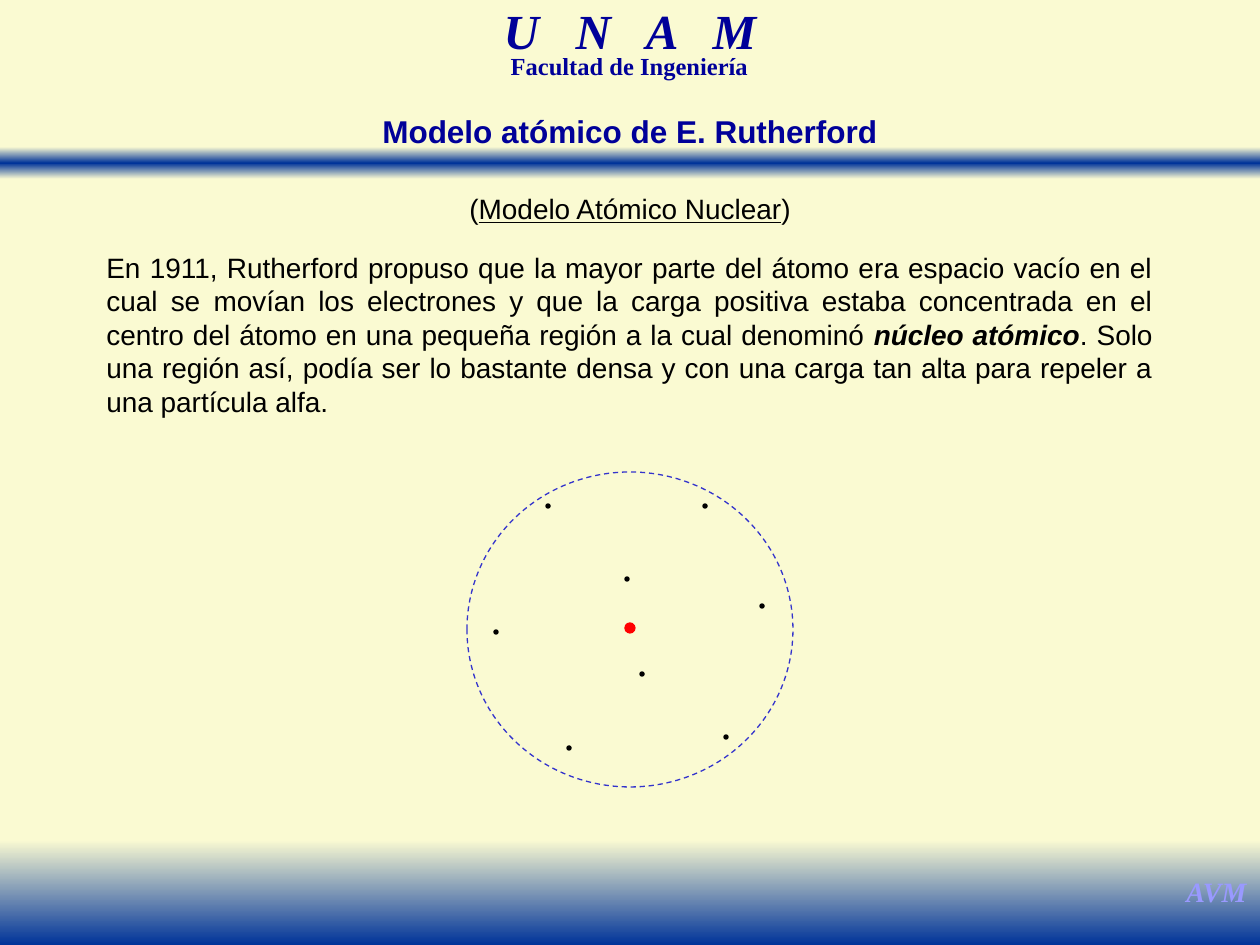
"""Build a slide on Rutherford's atomic model."""
from lxml import etree
from pptx import Presentation, util as u
from pptx.dml.color import RGBColor
from pptx.enum import dml, shapes, text
from pptx.oxml.ns import qn

COLORS = {
    "cream": "FAFAD2", "deep": "003399", "navy": "000099", "lilac": "9999FF",
    "ink": "000000", "nucleus": "FF0000", "orbit": "3333CC",
}
ELECTRONS = [(546, 504), (703, 504), (625, 577), (494, 630),
             (760, 604), (640, 672), (724, 735), (567, 746)]
SERIF = "Times New Roman"


def px(value):
    return u.Emu(round(value * 914400 / 126))


def rgb(name):
    return RGBColor.from_string(COLORS[name])


class Painter:
    def __init__(self, page):
        self.page = page
        fill = page.background.fill
        fill.solid()
        fill.fore_color.rgb = rgb("cream")

    def band(self, top, height, names):
        box = self.page.shapes.add_shape(
            shapes.MSO_SHAPE.RECTANGLE, px(0), px(top), px(1260), px(height))
        box.shadow.inherit = False
        box.line.fill.background()
        box.fill.gradient()
        box.fill.gradient_angle = 270
        stops = box._element.spPr.find(".//" + qn("a:gsLst"))
        for stop in list(stops):
            stops.remove(stop)
        for index, name in enumerate(names):
            position = index * 100000 // (len(names) - 1)
            stop = etree.SubElement(stops, qn("a:gs"), pos=str(position))
            etree.SubElement(stop, qn("a:srgbClr"), val=COLORS[name])

    def ellipse(self, parent, left, top, width, height, color, filled=True):
        dot = parent.add_shape(
            shapes.MSO_SHAPE.OVAL, px(left), px(top), px(width), px(height))
        dot.shadow.inherit = False
        dot.line.color.rgb = rgb(color)
        dot.line.width = u.Pt(0.75)
        if filled:
            dot.fill.solid()
            dot.fill.fore_color.rgb = rgb(color)
        else:
            dot.fill.background()
            dot.line.dash_style = dml.MSO_LINE.DASH

    def text(self, area, spans, size, color="ink", font="Arial", style="",
             align="CENTER", leading=None, wrap=True, box=None):
        box = box or self.page.shapes.add_textbox(0, 0, 0, 0)
        box.left, box.top, box.width, box.height = map(px, area)
        frame = box.text_frame
        frame.word_wrap = wrap
        frame.auto_size = text.MSO_AUTO_SIZE.SHAPE_TO_FIT_TEXT
        frame.vertical_anchor = text.MSO_ANCHOR.TOP
        para = frame.paragraphs[0]
        para.alignment = text.PP_ALIGN[align]
        if leading:
            para.line_spacing = leading
        for words, marks in spans:
            span = para.add_run()
            span.text = words
            marks += style
            span.font.name = font
            span.font.size = u.Pt(size)
            span.font.color.rgb = rgb(color)
            span.font.bold = "b" in marks
            span.font.italic = "i" in marks
            span.font.underline = "u" in marks
            if "w" in marks:
                span._r.get_or_add_rPr().set("spc", "700")


def main():
    deck = Presentation()
    deck.slide_width, deck.slide_height = px(1260), px(945)
    page = deck.slides.add_slide(deck.slide_layouts[5])
    painter = Painter(page)

    painter.band(147, 32, ["cream", "deep", "cream"])
    painter.text((383, 10, 494, 54), [("U N A ", "w"), ("M", "")], 28,
                 "navy", SERIF, "bi", leading=0.7)
    painter.text((404, 53, 451, 33), [("Facultad de Ingeniería", "")], 14,
                 "navy", SERIF, "b", leading=0.7)
    painter.band(840, 105, ["cream", "deep"])
    painter.text((1173, 868, 87, 47), [("AVM", "")], 16,
                 "lilac", SERIF, "bi", wrap=False)

    painter.text((357, 106, 546, 50), [("Modelo atómico de E. Rutherford", "")],
                 18, "navy", style="b", box=page.shapes.title)
    painter.text((357, 185, 546, 47),
                 [("(", ""), ("Modelo Atómico Nuclear", "u"), (")", "")], 16)
    painter.text((94, 244, 1071, 183), [
        ("En 1911, Rutherford propuso que la mayor parte del átomo era espacio "
         "vacío en el cual se movían los electrones y que la carga positiva "
         "estaba concentrada en el centro del átomo en una pequeña región a la "
         "cual denominó ", ""),
        ("núcleo atómico", "bi"),
        (". Solo una región así, podía ser lo bastante densa y con una carga "
         "tan alta para repeler a una partícula alfa.", ""),
    ], 16, align="JUSTIFY")

    painter.ellipse(page.shapes, 625, 623, 10, 10, "nucleus")
    electrons = page.shapes.add_group_shape().shapes
    for left, top in ELECTRONS:
        painter.ellipse(electrons, left, top, 4, 4, "ink")
    painter.ellipse(page.shapes, 467, 472, 326, 315, "orbit", filled=False)
    deck.save("out.pptx")


if __name__ == "__main__":
    main()
